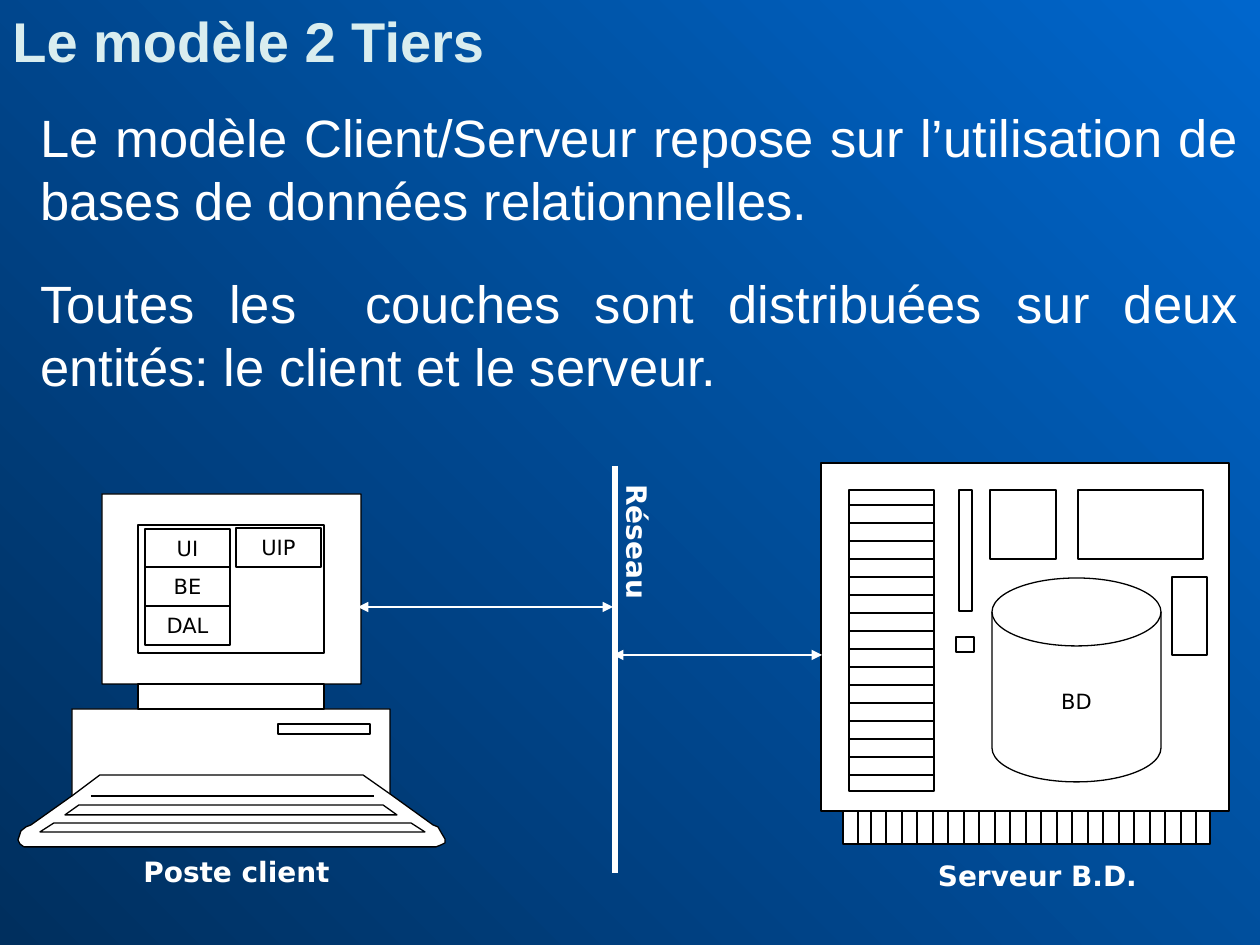
from copy import deepcopy
from lxml.etree import SubElement
from pptx import Presentation
from pptx.dml.color import RGBColor
from pptx.enum.shapes import MSO_CONNECTOR, MSO_SHAPE
from pptx.enum.text import MSO_ANCHOR, PP_ALIGN
from pptx.oxml.ns import qn
from pptx.util import Pt

PX = 914400 / 126
THEME = {
    "dark": RGBColor(0x00, 0x2F, 0x5E),
    "light": RGBColor(0x00, 0x66, 0xCC),
    "white": RGBColor(0xFF, 0xFF, 0xFF),
    "black": RGBColor(0x00, 0x00, 0x00),
    "title": RGBColor(0xD9, 0xED, 0xEF),
    "sans": "Arial",
    "tag": "DejaVu Sans",
    "head": 32,
    "body": 30,
    "label": 16,
    "small": 12,
}

deck = Presentation()
deck.slide_width = round(1260 * PX)
deck.slide_height = round(945 * PX)
slide = deck.slides.add_slide(deck.slide_layouts[6])
shapes = slide.shapes

back = slide.background.fill
back.gradient()
back.gradient_angle = 45
for stop, name in zip(back.gradient_stops, ("dark", "light")):
    stop.color.rgb = THEME[name]


def paint(shape):
    shape.shadow.inherit = False
    shape.fill.solid()
    shape.fill.fore_color.rgb = THEME["white"]
    shape.line.color.rgb = THEME["black"]
    shape.line.width = Pt(0.75)


def frames(rects):
    return [
        [(x, y), (x + w, y), (x + w, y + h), (x, y + h), (x, y)]
        for x, y, w, h in rects
    ]


client = [
    (433, 825), (390, 794), (390, 709), (324, 709), (324, 684), (361, 684),
    (361, 494), (102, 494), (102, 684), (138, 684), (138, 709), (72, 709),
    (72, 796), (31, 825), (26, 827), (21, 831), (18, 840), (20, 844),
    (24, 847), (436, 847), (441, 845), (445, 843), (445, 839), (442, 834),
    (438, 827), (433, 825),
]
keys = [
    [(390, 794), (363, 775), (100, 775), (72, 796)],
    [(91, 796), (374, 796)],
    [(397, 815), (383, 805), (79, 805), (65, 815), (397, 815)],
    [(425, 832), (411, 823), (54, 823), (40, 832), (425, 832)],
]
screen = frames([(278, 724, 92, 10), (138, 525, 186, 128), (138, 684, 186, 25)])

server = [
    (1229, 463), (821, 463), (821, 811), (843, 811), (843, 844),
    (1210, 844), (1210, 811), (1229, 811), (1229, 463),
]
rack = [[(849, 505 + 18 * row), (934, 505 + 18 * row)] for row in range(16)]
comb = [
    [(x, 811), (x, 844)]
    for x in [858] + [871 + 31 * col // 2 for col in range(22)]
]
parts = frames([
    (849, 490, 85, 301), (959, 490, 13, 121), (956, 637, 18, 15),
    (990, 490, 66, 69), (1078, 490, 125, 69), (1172, 577, 35, 78),
])

for edge, inner in (
    (client, keys + screen),
    (server, [[(843, 811), (1210, 811)]] + rack + comb + parts),
):
    pen = shapes.build_freeform(*edge[0], scale=PX)
    pen.add_line_segments(edge[1:], close=False)
    for points in inner:
        pen.move_to(*points[0])
        pen.add_line_segments(points[1:], close=False)
    form = pen.convert_to_shape()
    paint(form)
    outer = form._element.find(".//" + qn("a:path"))
    detail = deepcopy(outer)
    outer.addnext(detail)
    for node in list(outer)[len(edge):]:
        outer.remove(node)
    for node in list(detail)[:len(edge)]:
        detail.remove(node)

rect, can = MSO_SHAPE.RECTANGLE, MSO_SHAPE.FLOWCHART_MAGNETIC_DISK
for text, kind, spot, inset in (
    ("DAL", rect, (145, 606, 85, 39), 6),
    ("BD", can, (992, 578, 169, 204), 14),
    ("UI", rect, (145, 529, 85, 39), 6),
    ("BE", rect, (145, 567, 85, 39), 6),
    ("UIP", rect, (236, 528, 85, 39), 6),
):
    tile = shapes.add_shape(kind, *(round(n * PX) for n in spot))
    paint(tile)
    frame = tile.text_frame
    frame.text = text
    frame.vertical_anchor = MSO_ANCHOR.MIDDLE
    frame.margin_top = round(inset * PX)
    para = frame.paragraphs[0]
    para.alignment = PP_ALIGN.CENTER
    para.font.name = THEME["tag"]
    para.font.size = Pt(THEME["small"])
    para.font.color.rgb = THEME["black"]

for ends, width, arrow in (
    ((358, 607, 613, 607), 0.75, True),
    ((615, 466, 615, 873), 3, False),
    ((613, 655, 822, 655), 0.75, True),
):
    link = shapes.add_connector(
        MSO_CONNECTOR.STRAIGHT, *(round(n * PX) for n in ends)
    )
    link.line.color.rgb = THEME["white"]
    link.line.width = Pt(width)
    if arrow:
        for end in ("a:headEnd", "a:tailEnd"):
            SubElement(link.line._get_or_add_ln(), qn(end), type="triangle")
    SubElement(link._element.spPr, qn("a:effectLst"))

left, mid, full = PP_ALIGN.LEFT, PP_ALIGN.CENTER, PP_ALIGN.JUSTIFY
story = [
    "Le modèle Client/Serveur repose sur l’utilisation de bases de données relationnelles.",
    "Toutes les  couches sont distribuées sur deux entités: le client et le serveur.",
]
for spot, texts, face, size, color, bold, align, turn in (
    ((28, 99, 1223, 320), story, "sans", "body", "white", False, full, 0),
    ((865, 852, 345, 47), ["Serveur B.D."], "tag", "label", "white", True, mid, 0),
    ((67, 848, 339, 47), ["Poste client"], "tag", "label", "white", True, mid, 0),
    ((543, 518, 188, 47), ["Réseau"], "tag", "label", "white", True, mid, 90),
    ((0, 0, 1260, 79), ["Le modèle 2 Tiers"], "sans", "head", "title", True, left, 0),
):
    area = shapes.add_textbox(*(round(n * PX) for n in spot))
    area.rotation = turn
    frame = area.text_frame
    frame.word_wrap = True
    frame.text = "\n".join(texts)
    for rank, para in enumerate(frame.paragraphs):
        para.alignment = align
        para.font.name = THEME[face]
        para.font.size = Pt(THEME[size])
        para.font.bold = bold
        para.font.color.rgb = THEME[color]
        if size == "body":
            para.line_spacing = Pt(36)
        if rank:
            para.space_before = Pt(23)

deck.save("out.pptx")
